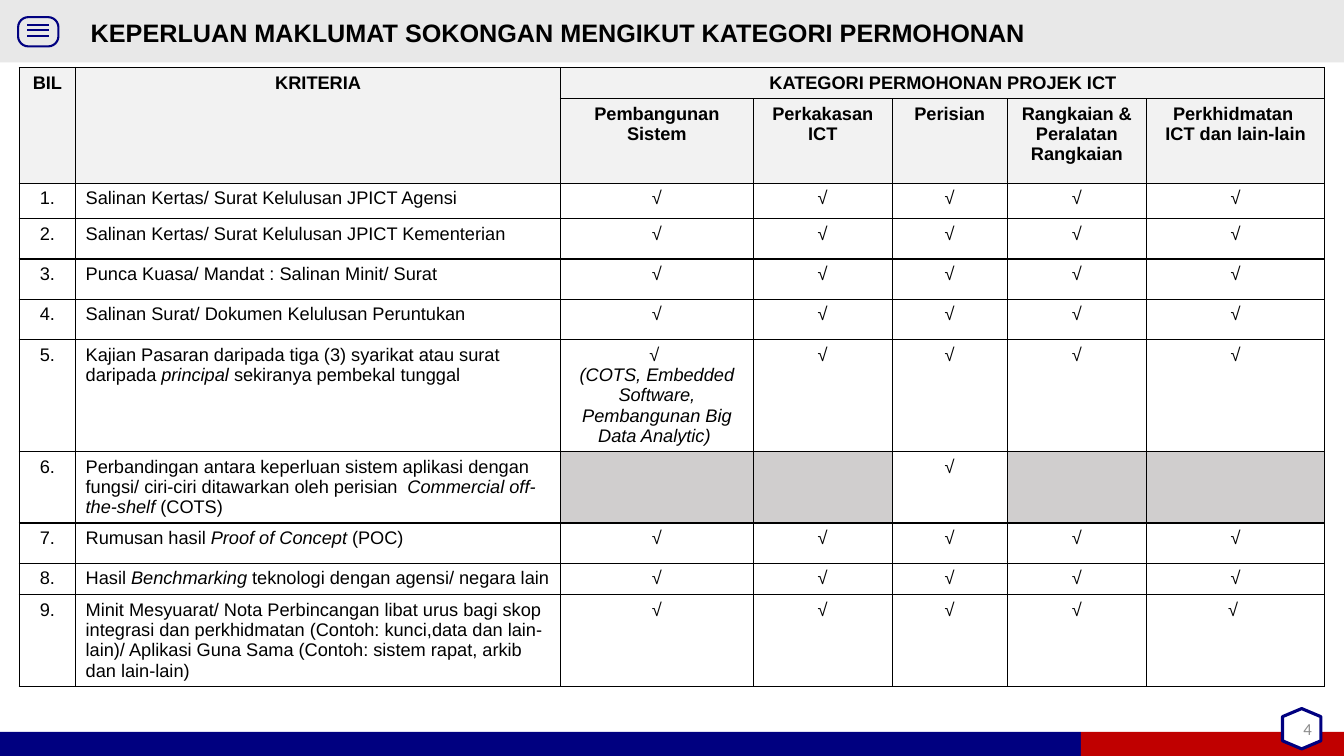
from pptx import Presentation
from pptx.dml.color import RGBColor
from pptx.enum.shapes import MSO_CONNECTOR, MSO_SHAPE
from pptx.enum.text import MSO_ANCHOR, PP_ALIGN
from pptx.oxml import parse_xml
from pptx.oxml.ns import nsdecls
from pptx.util import Inches, Pt

NAVY = RGBColor(0x00, 0x00, 0x80)
RED = RGBColor(0xC0, 0x00, 0x00)
BAND = RGBColor(0xE8, 0xE8, 0xE8)
HEAD = RGBColor(0xF2, 0xF2, 0xF2)
GREY = RGBColor(0xD0, 0xCE, 0xCE)
MUTED = RGBColor(0x8C, 0x8C, 0x8C)
WHITE = RGBColor(0xFF, 0xFF, 0xFF)
BLACK = RGBColor(0x00, 0x00, 0x00)


def add_runs(p, text, color=BLACK, **fmt):
    for i, part in enumerate(text.split("*")):
        if part:
            r = p.add_run()
            r.text = part
            r.font.color.rgb = color
            for name, value in {"name": "Arial", "italic": i % 2 == 1, **fmt}.items():
                setattr(r.font, name, value)


def add_box(kind, box, fill=None, line_width=None):
    sp = s.shapes.add_shape(kind, *map(Inches, box))
    sp.shadow.inherit = False
    if fill is None:
        sp.fill.background()
    else:
        sp.fill.solid()
        sp.fill.fore_color.rgb = fill
    if line_width is None:
        sp.line.fill.background()
    else:
        sp.line.color.rgb = NAVY
        sp.line.width = Pt(line_width)
    return sp


prs = Presentation()
prs.slide_width, prs.slide_height = Inches(13.33), Inches(7.5)
s = prs.slides.add_slide(prs.slide_layouts[5])

for box, fill in [
    ((0, 0, 13.33, 0.62), BAND),
    ((0, 7.26, 10.72, 0.24), NAVY),
    ((10.72, 7.26, 2.61, 0.24), RED),
]:
    add_box(MSO_SHAPE.RECTANGLE, box, fill)

badge = add_box(MSO_SHAPE.FLOWCHART_PREPARATION, (12.71, 7.04, 0.4, 0.38), WHITE, 2.25)
badge.rotation = 90
menu = add_box(MSO_SHAPE.ROUNDED_RECTANGLE, (0.18, 0.17, 0.4, 0.29), None, 1.5)
menu.adjustments[0] = 0.35
for y in (0.25, 0.3, 0.36):
    bar = s.shapes.add_connector(
        MSO_CONNECTOR.STRAIGHT, Inches(0.27), Inches(y), Inches(0.49), Inches(y))
    bar.line.color.rgb = NAVY
    bar.line.width = Pt(1.5)
    bar._element.spPr.append(parse_xml(f"<a:effectLst {nsdecls('a')}/>"))

title = s.shapes.title
title._element.getparent().append(title._element)
title.left, title.top, title.width, title.height = map(Inches, (0.8, 0.15, 11.61, 0.35))
tf = title.text_frame
tf.vertical_anchor = MSO_ANCHOR.MIDDLE
p = tf.paragraphs[0]
p.alignment = PP_ALIGN.LEFT
add_runs(p, "KEPERLUAN MAKLUMAT SOKONGAN MENGIKUT KATEGORI PERMOHONAN",
         size=Pt(18), bold=True)

criteria = [
    "Salinan Kertas/ Surat Kelulusan JPICT Agensi",
    "Salinan Kertas/ Surat Kelulusan JPICT Kementerian",
    "Punca Kuasa/ Mandat : Salinan Minit/ Surat",
    "Salinan Surat/ Dokumen Kelulusan Peruntukan",
    "Kajian Pasaran daripada tiga (3) syarikat atau surat daripada *principal *"
    "sekiranya pembekal tunggal",
    "Perbandingan antara keperluan sistem aplikasi dengan fungsi/ ciri-ciri "
    "ditawarkan oleh perisian  *Commercial off-the-shelf *(COTS)",
    "Rumusan hasil *Proof of Concept *(POC)",
    "Hasil* Benchmarking* teknologi dengan agensi/ negara lain",
    "Minit Mesyuarat/ Nota Perbincangan libat urus bagi skop integrasi dan "
    "perkhidmatan (Contoh: kunci,data dan lain-lain)/ Aplikasi Guna Sama "
    "(Contoh: sistem rapat, arkib dan lain-lain)",
]
rows = [
    ["BIL", "KRITERIA", "KATEGORI PERMOHONAN PROJEK ICT", "", "", "", ""],
    ["", "", "Pembangunan Sistem", "Perkakasan ICT", "Perisian",
     "Rangkaian & Peralatan Rangkaian", "Perkhidmatan  ICT dan lain-lain"],
]
rows += [[f"{n}.", text] + ["√"] * 5 for n, text in enumerate(criteria, 1)]
rows[6][2] = "√ \n*(COTS, Embedded Software, Pembangunan Big Data Analytic) *"
rows[7][2:] = ["", "", "√", "", ""]
rows[10][6] = "√ "

col_widths = [0.56, 4.81, 1.91, 1.38, 1.14, 1.38, 1.77]
row_heights = [0.31, 0.84, 0.35, 0.4, 0.4, 0.4, 1.11, 0.71, 0.4, 0.31, 0.91]
table = s.shapes.add_table(
    len(rows), len(col_widths), Inches(0.19), Inches(0.67),
    Inches(sum(col_widths)), Inches(sum(row_heights))).table
table.first_row = table.horz_banding = False
for col, width in zip(table.columns, col_widths):
    col.width = Inches(width)
for row, height in zip(table.rows, row_heights):
    row.height = Inches(height)

for i, row in enumerate(rows):
    for j, text in enumerate(row):
        cell = table.cell(i, j)
        tcPr = cell._tc.get_or_add_tcPr()
        for side in ("lnL", "lnR", "lnT", "lnB"):
            tcPr.append(parse_xml(
                f'<a:{side} {nsdecls("a")} w="12700"><a:solidFill>'
                f'<a:srgbClr val="{BLACK}"/></a:solidFill></a:{side}>'))
        cell.fill.solid()
        cell.fill.fore_color.rgb = HEAD if i < 2 else WHITE if text else GREY
        tf = cell.text_frame
        for k, line in enumerate(text.split("\n")):
            p = tf.add_paragraph() if k else tf.paragraphs[0]
            p.alignment = PP_ALIGN.LEFT if i > 1 and j == 1 else PP_ALIGN.CENTER
            add_runs(p, line, size=Pt(13), bold=i < 2)

for first, last in [((0, 0), (1, 0)), ((0, 1), (1, 1)), ((0, 2), (0, 6))]:
    table.cell(*first).merge(table.cell(*last))

number = s.shapes.add_textbox(Inches(10.11), Inches(7.03), Inches(3), Inches(0.4))
tf = number.text_frame
tf.word_wrap = True
tf.vertical_anchor = MSO_ANCHOR.MIDDLE
p = tf.paragraphs[0]
p.alignment = PP_ALIGN.RIGHT
add_runs(p, "4", MUTED, name="Calibri", size=Pt(12))

prs.save("out.pptx")
